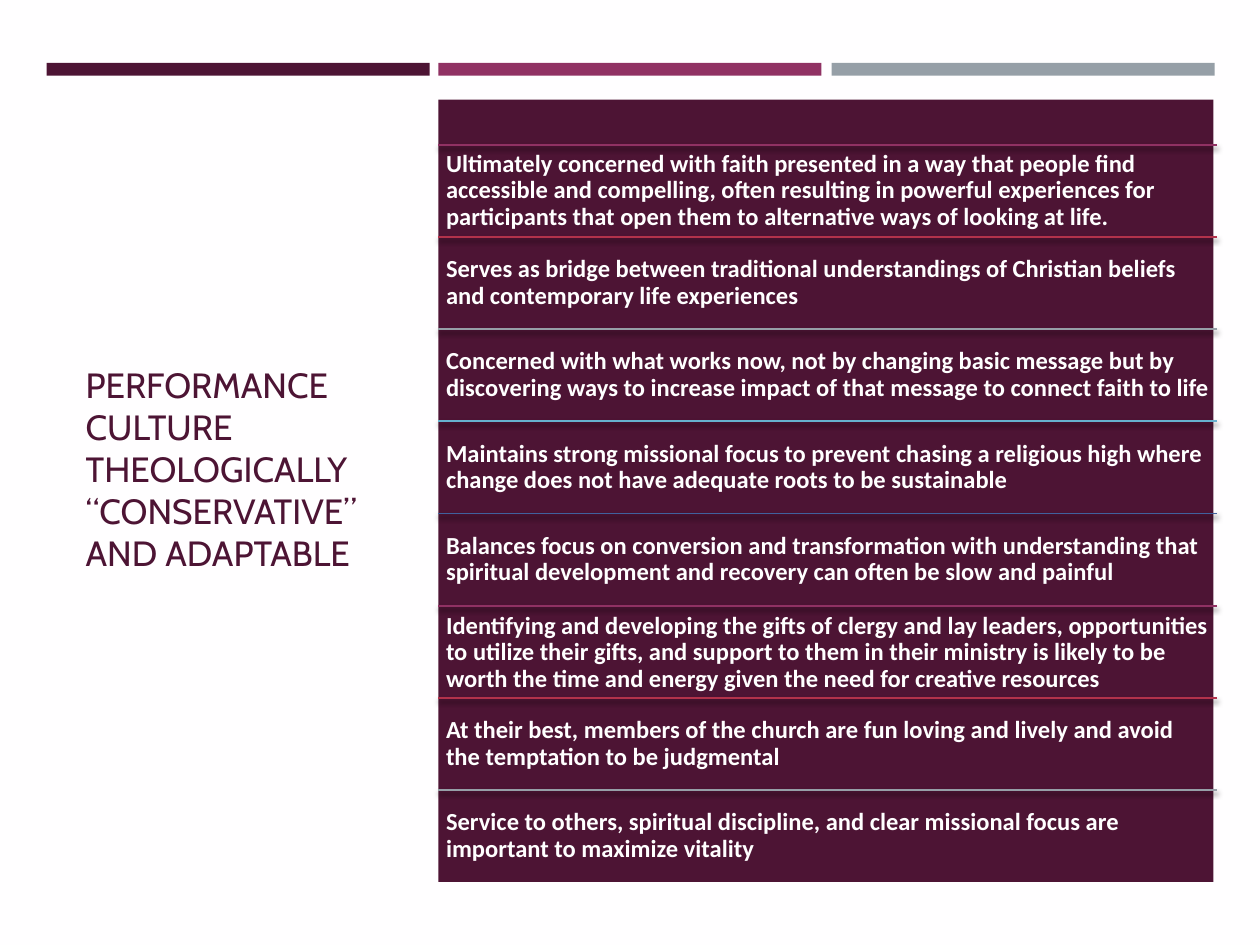
"""Build the slide on performance culture: a title beside a ruled panel of points."""
from dataclasses import dataclass

from lxml import etree
from pptx import Presentation
from pptx.dml.color import RGBColor
from pptx.enum.shapes import MSO_CONNECTOR, MSO_SHAPE
from pptx.enum.text import MSO_ANCHOR
from pptx.oxml import parse_xml
from pptx.oxml.ns import nsdecls
from pptx.slide import Slide
from pptx.text.text import TextFrame
from pptx.util import Inches, Pt

RECT = MSO_SHAPE.RECTANGLE
LINE = MSO_CONNECTOR.STRAIGHT
TOP = MSO_ANCHOR.TOP
MIDDLE = MSO_ANCHOR.MIDDLE

PAPER = RGBColor(0xFF, 0xFE, 0xFF)
WHITE = RGBColor(0xFF, 0xFF, 0xFF)
PLUM = RGBColor(0x4D, 0x14, 0x34)
MAUVE = RGBColor(0x90, 0x31, 0x63)
RED = RGBColor(0xB2, 0x32, 0x4B)
GREY = RGBColor(0x96, 0x9F, 0xA7)
SKY = RGBColor(0x66, 0xB1, 0xCE)
BLUE = RGBColor(0x40, 0x61, 0x9D)

LEFT = 3.48
WIDTH = 6.18
START = 1.15
STEP = (6.27 - START) / 7

SHADOW = (
    f'<a:effectLst {nsdecls("a")}><a:outerShdw blurRad="{Pt(3)}" dist="{Pt(2)}" '
    'dir="5400000" algn="ctr" rotWithShape="0"><a:srgbClr val="000000">'
    '<a:alpha val="55000"/></a:srgbClr></a:outerShdw></a:effectLst>'
)


@dataclass
class Block:
    """A plain filled rectangle, in inches."""
    left: float
    top: float
    width: float
    height: float
    color: RGBColor


@dataclass
class Point:
    """A point and the colour of the rule above it."""
    color: RGBColor
    text: str
    anchor: MSO_ANCHOR = MIDDLE


BLOCKS = [
    Block(0, 0, 10, 7.5, PAPER),
    Block(0.37, 0.5, 3.04, 0.1, PLUM),
    Block(3.48, 0.5, 3.04, 0.1, MAUVE),
    Block(6.6, 0.5, 3.04, 0.1, GREY),
    Block(LEFT, 0.79, 6.15, 6.21, PLUM),
]

TITLE = ["PERFORMANCE CULTURE", "THEOLOGICALLY “CONSERVATIVE” AND ADAPTABLE"]

POINTS = [
    Point(MAUVE, "Ultimately concerned with faith presented in a way that people find "
          "accessible and compelling, often resulting in powerful experiences for "
          "participants that open them to alternative ways of looking at life."),
    Point(RED, "Serves as bridge between traditional understandings of Christian beliefs "
          "and contemporary life experiences"),
    Point(GREY, "Concerned with what works now, not by changing basic message but by "
          "discovering ways to increase impact of that message to connect faith to life"),
    Point(SKY, "Maintains strong missional focus to prevent chasing a religious high where "
          "change does not have adequate roots to be sustainable"),
    Point(BLUE, "Balances focus on conversion and transformation with understanding that "
          "spiritual development and recovery can often be slow and painful"),
    Point(MAUVE, "Identifying and developing the gifts of clergy and lay leaders, opportunities "
          "to utilize their gifts, and support to them in their ministry is likely to be "
          "worth the time and energy given the need for creative resources", TOP),
    Point(RED, "At their best, members of the church are fun loving and lively and avoid "
          "the temptation to be judgmental"),
    Point(GREY, "Service to others, spiritual discipline, and clear missional focus are "
          "important to maximize vitality"),
]


def add_block(slide: Slide, block: Block) -> None:
    """Draw one filled rectangle."""
    shape = slide.shapes.add_shape(RECT, Inches(block.left), Inches(block.top),
                                   Inches(block.width), Inches(block.height))
    shape.shadow.inherit = False
    shape.fill.solid()
    shape.fill.fore_color.rgb = block.color
    shape.line.fill.background()


def add_box(slide: Slide, left: float, top: float, width: float, height: float,
            side: float, edge: float, anchor: MSO_ANCHOR) -> TextFrame:
    """Add a wrapping text box and return its frame."""
    frame = slide.shapes.add_textbox(Inches(left), Inches(top),
                                     Inches(width), Inches(height)).text_frame
    frame.word_wrap = True
    frame.vertical_anchor = anchor
    frame.margin_left = frame.margin_right = Inches(side)
    frame.margin_top = frame.margin_bottom = Inches(edge)
    return frame


def add_title(slide: Slide) -> None:
    """Write the title, with a line break between its parts."""
    para = add_box(slide, 0.61, 1.14, 2.5, 5.15, 0.07, 0.04, MIDDLE).paragraphs[0]
    for index, text in enumerate(TITLE):
        if index:
            para.add_line_break()
        run = para.add_run()
        run.text = text
        run.font.name = "Cabin"
        run.font.size = Pt(20)
        run.font.color.rgb = PLUM


def add_point(slide: Slide, point: Point, top: float) -> None:
    """Draw a shadowed rule with its point below."""
    rule = slide.shapes.add_connector(LINE, Inches(LEFT), Inches(top),
                                      Inches(LEFT + WIDTH), Inches(top))
    rule.line.color.rgb = point.color
    rule.line.width = Pt(1)
    rule._element.spPr.append(parse_xml(SHADOW))
    frame = add_box(slide, LEFT, top, WIDTH, STEP, 0.06, 0.06, point.anchor)
    para = frame.paragraphs[0]
    para.line_spacing = 0.9
    run = para.add_run()
    run.text = point.text
    run.font.name = "Calibri"
    run.font.size = Pt(14)
    run.font.bold = True
    run.font.color.rgb = WHITE


def main() -> None:
    """Build and save the slide."""
    deck = Presentation()
    deck.slide_width, deck.slide_height = Inches(10), Inches(7.5)
    slide = deck.slides.add_slide(deck.slide_layouts[6])
    for block in BLOCKS:
        add_block(slide, block)
    add_title(slide)
    for row, point in enumerate(POINTS):
        add_point(slide, point, START + row * STEP)
    deck.save("out.pptx")


if __name__ == "__main__":
    main()
